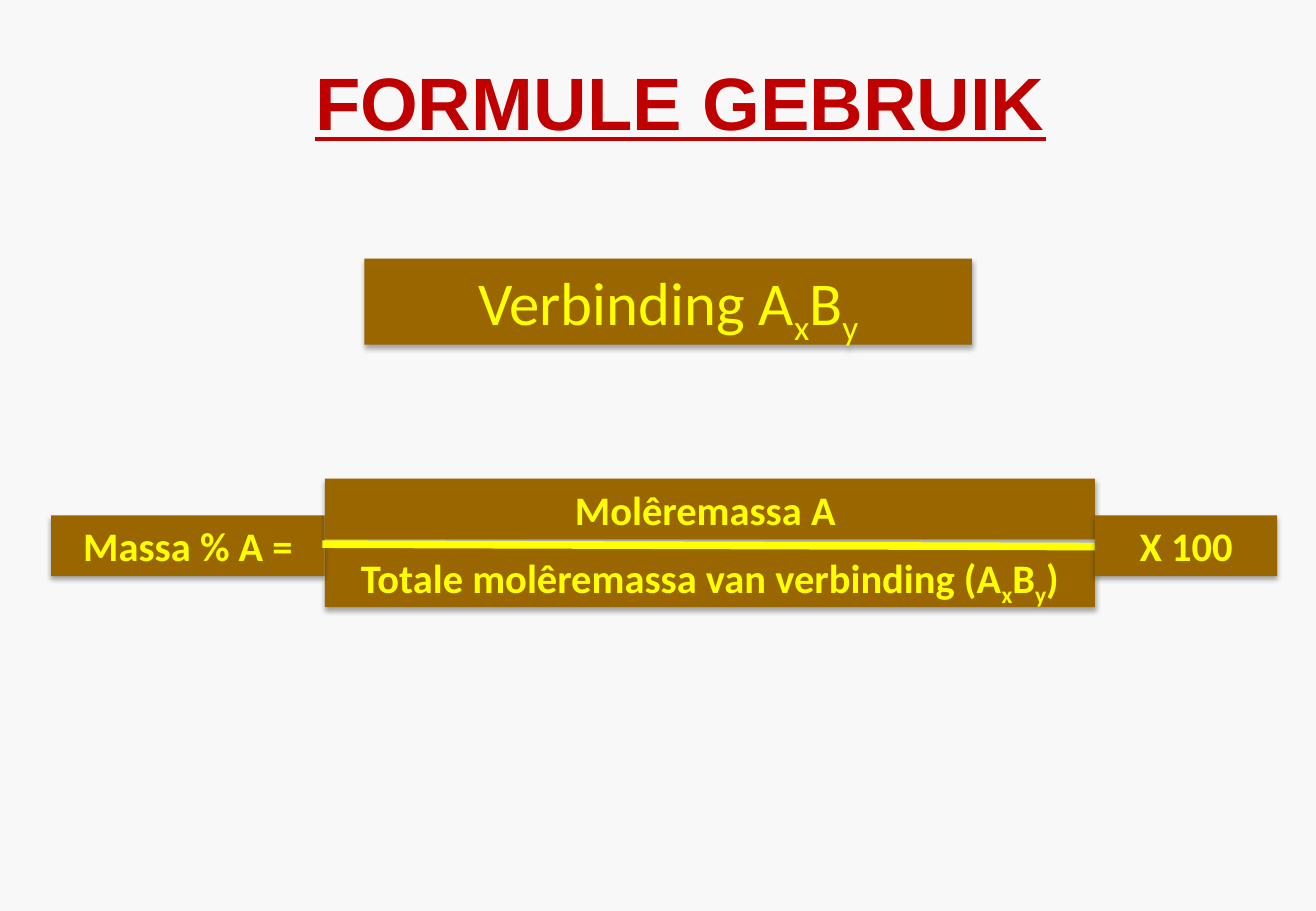
from dataclasses import dataclass

from lxml import etree
from pptx import Presentation
from pptx.dml.color import RGBColor
from pptx.enum import shapes, text
from pptx.oxml import ns
from pptx.util import Cm, Pt


@dataclass(frozen=True)
class Theme:
    """Colours and type sizes of the slide."""
    paper: str = "F8F8F8"
    red: str = "C00000"
    brown: str = "996600"
    yellow: str = "FFFF00"
    shadow: str = "000000"
    head: str = "Arial"
    body: str = "Calibri"
    title: int = 44
    large: int = 36
    medium: int = 24
    bar: float = 4.5


THEME = Theme()
COMPOUND = [("A", False), ("x", True), ("B", False), ("y", True)]


def set_attrs(obj, values):
    """Set every named value on an object."""
    for name, value in values.items():
        setattr(obj, name, value)


def add_effects(shape, shadow=True):
    """Replace inherited effects with an optional soft drop shadow."""
    spPr = shape._element.spPr
    effects = etree.SubElement(spPr, ns.qn("a:effectLst"))
    if shadow:
        outer = etree.SubElement(effects, ns.qn("a:outerShdw"), blurRad=str(Pt(3.1)),
                                 dist=str(Pt(1.8)), dir="5400000", rotWithShape="0")
        clr = etree.SubElement(outer, ns.qn("a:srgbClr"), val=THEME.shadow)
        etree.SubElement(clr, ns.qn("a:alpha"), val="35000")


def add_run(p, words, color, font, subscript=False):
    """Add a formatted run to a paragraph."""
    r = p.add_run()
    r.text = words
    set_attrs(r.font, font)
    r.font.color.rgb = RGBColor.from_string(color)
    if subscript:
        r._r.get_or_add_rPr().set("baseline", "-25000")


def add_title(s, box):
    """Place the underlined heading in its box."""
    tf = s.shapes.add_textbox(*map(Cm, box)).text_frame
    set_attrs(tf, {"word_wrap": True, "vertical_anchor": text.MSO_ANCHOR.MIDDLE})
    p = tf.paragraphs[0]
    set_attrs(p, {"alignment": text.PP_ALIGN.CENTER, "line_spacing": 0.9})
    font = {"name": THEME.head, "size": Pt(THEME.title), "bold": True}
    for words, underline in [("FORMULE GEBRUIK", True), (" ", False)]:
        add_run(p, words, THEME.red, font | {"underline": underline})


def add_panel(parent, box, runs, size, bold=True):
    """Place a brown panel with centred yellow text."""
    sp = parent.add_shape(shapes.MSO_SHAPE.RECTANGLE, *map(Cm, box))
    sp.fill.solid()
    sp.fill.fore_color.rgb = RGBColor.from_string(THEME.brown)
    sp.line.fill.background()
    add_effects(sp)
    tf = sp.text_frame
    set_attrs(tf, {"word_wrap": True, "vertical_anchor": text.MSO_ANCHOR.TOP,
                   "auto_size": text.MSO_AUTO_SIZE.SHAPE_TO_FIT_TEXT})
    p = tf.paragraphs[0]
    p.alignment = text.PP_ALIGN.CENTER
    font = {"name": THEME.body, "size": Pt(size), "bold": bold}
    for words, subscript in runs:
        add_run(p, words, THEME.yellow, font, subscript)


def add_formula(s, box):
    """Place the mass percentage formula with its fraction bar."""
    x, y, w, h = box
    row, label_w, times_w = 1.27, 5.72, 3.81
    frac_x, frac_w = x + label_w, w - label_w - times_w
    side_y, low_y = y + 0.77, y + h - row
    parts = s.shapes.add_group_shape().shapes
    panels = [
        (frac_x, low_y, frac_w,
         [("Totale molêremassa van verbinding (", False), *COMPOUND, (")", False)]),
        (x, side_y, label_w, [("Massa % A =", False)]),
        (frac_x, y, frac_w, [("Molêremassa A ", False)]),
        (x + w - times_w, side_y, times_w, [("X 100", False)]),
    ]
    for left, top, width, runs in panels[:3]:
        add_panel(parts, (left, top, width, row), runs, THEME.medium)
    ends = (frac_x - 0.05, low_y - 0.05, frac_x + frac_w, low_y)
    bar = parts.add_connector(shapes.MSO_CONNECTOR.STRAIGHT, *map(Cm, ends))
    bar.line.color.rgb = RGBColor.from_string(THEME.yellow)
    bar.line.width = Pt(THEME.bar)
    add_effects(bar, shadow=False)
    left, top, width, runs = panels[3]
    add_panel(parts, (left, top, width, row), runs, THEME.medium)


def main():
    """Build and save the presentation."""
    prs = Presentation()
    set_attrs(prs, {"slide_width": Cm(27.51), "slide_height": Cm(19.05)})
    s = prs.slides.add_slide(prs.slide_layouts[6])
    s.background.fill.solid()
    s.background.fill.fore_color.rgb = RGBColor.from_string(THEME.paper)
    add_title(s, (2.97, 0.64, 22.94, 3.18))
    add_panel(s.shapes, (7.62, 5.41, 12.7, 1.8),
              [("Verbinding ", False), *COMPOUND], THEME.large, bold=False)
    add_formula(s, (1.07, 10.01, 25.63, 2.69))
    prs.save("out.pptx")


if __name__ == "__main__":
    main()
